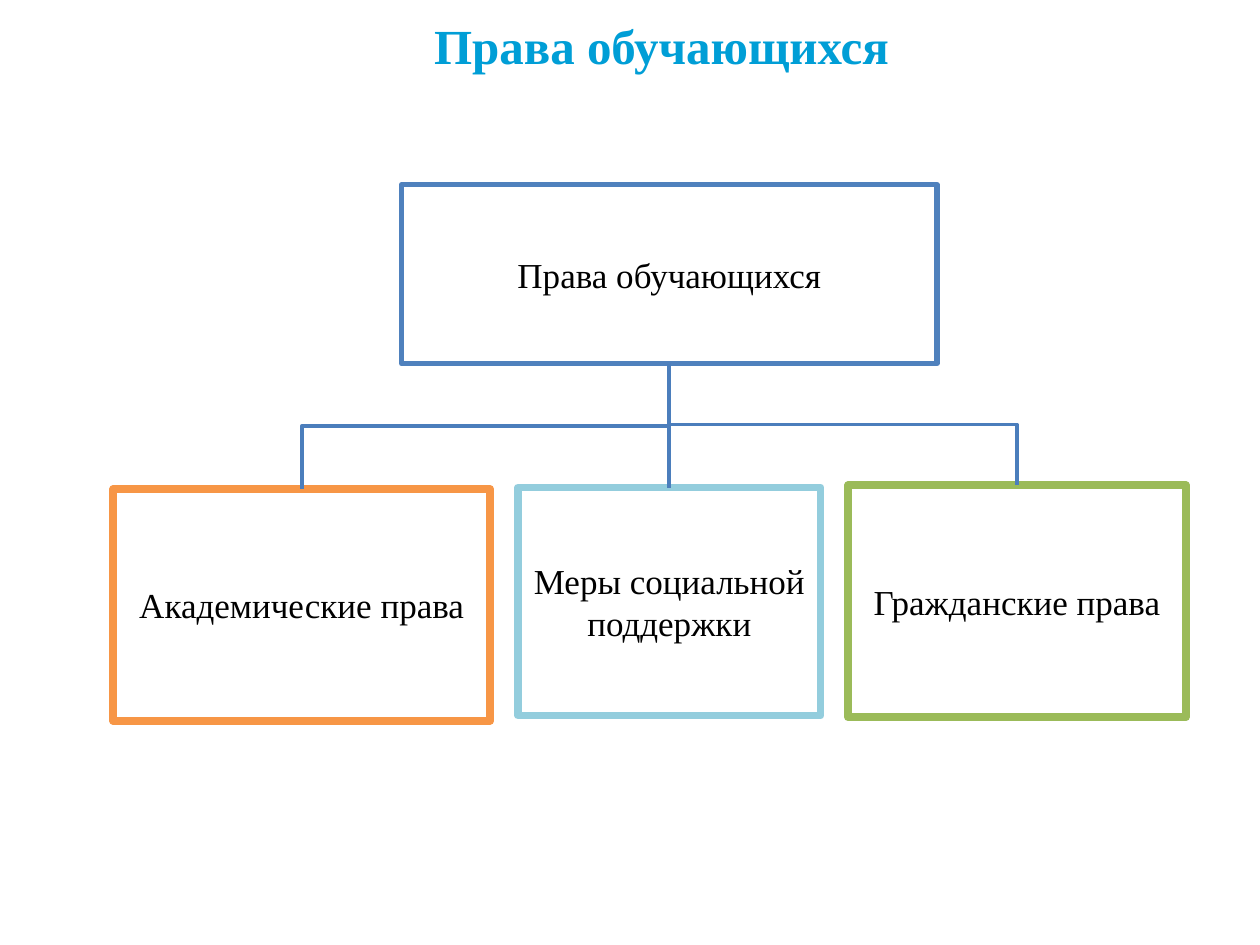
from lxml.etree import SubElement as Sub
from pptx import Presentation
from pptx.dml.color import RGBColor as RGB
from pptx.enum.shapes import MSO_CONNECTOR as Conn, MSO_SHAPE as Shape
from pptx.enum.text import MSO_ANCHOR as Anchor, PP_ALIGN as Align
from pptx.oxml.ns import qn
from pptx.util import Pt

TITLE = RGB(0x00, 0x9E, 0xD6)
BLACK = RGB(0x00, 0x00, 0x00)
BLUE = RGB(0x4F, 0x81, 0xBD)
LINK = RGB(0x4B, 0x7E, 0xBC)
AQUA = RGB(0x93, 0xCD, 0xDD)
ORANGE = RGB(0xF7, 0x96, 0x46)
GREEN = RGB(0x9B, 0xBB, 0x59)


class Chart:
    """Holds the style and the current slide."""
    font = "Times New Roman"
    size = 20
    link = 2.25

    def __init__(self, slide):
        self.slide = slide
        self.shapes = slide.shapes

    def label(self, shape, text, size, color, bold=False):
        frame = shape.text_frame
        frame.word_wrap = True
        frame.vertical_anchor = Anchor.MIDDLE
        para = frame.paragraphs[0]
        para.alignment = Align.CENTER
        run = para.add_run()
        run.text = text
        run.font.name = self.font
        run.font.size = Pt(size)
        run.font.bold = bold
        run.font.color.rgb = color

    def title(self, text, area):
        box = self.shapes.add_textbox(*map(Pt, area))
        self.label(box, text, 28, TITLE, True)

    def box(self, text, area, color, width):
        box = self.shapes.add_shape(Shape.RECTANGLE, *map(Pt, area))
        box.shadow.inherit = False
        box.fill.background()
        box.line.color.rgb = color
        box.line.width = Pt(width)
        self.label(box, text, self.size, BLACK)

    def wire(self, kind, start, end):
        line = self.shapes.add_connector(kind, *map(Pt, start + end))
        line.line.color.rgb = LINK
        line.line.width = Pt(self.link)
        Sub(line._element.spPr, qn("a:effectLst"))
        return line

    def elbow(self, start, end):
        """Link that leaves downwards: a sideways elbow, turned upright."""
        (x1, y1), (x2, y2) = start, end
        side = 1 if x2 > x1 else -1
        mid_x, mid_y = (x1 + x2) / 2, (y1 + y2) / 2
        dx, dy = side * (y2 - y1) / 2, abs(x2 - x1) / 2
        line = self.wire(Conn.ELBOW, (mid_x + dx, mid_y - dy),
                         (mid_x - dx, mid_y + dy))
        turn = 270 if side > 0 else 90
        line._element.spPr.find(qn("a:xfrm")).set("rot", str(turn * 60000))


def main():
    deck = Presentation()
    deck.slide_width, deck.slide_height = Pt(720), Pt(540)
    chart = Chart(deck.slides.add_slide(deck.slide_layouts[6]))

    # Title
    chart.title("Права обучающихся", (54, 3.6, 648, 43.9))

    # Root box
    left, top, width, height = root = (229.5, 105.6, 306, 102.2)
    chart.box("Права обучающихся", root, BLUE, 3)
    start = (left + width / 2, top + height)

    # Branch boxes
    parts = [
        ("Меры социальной поддержки", (296.1, 278.6, 172.8, 130.3), AQUA),
        ("Академические права", (64.8, 279.4, 215.3, 132.5), ORANGE),
        ("Гражданские права", (484.6, 277.4, 193, 132.5), GREEN),
    ]
    for text, area, color in parts:
        chart.box(text, area, color, 4.5)

    # Links from the root to the top of each branch
    middle, *sides = [(x + w / 2, y) for _, (x, y, w, _), _ in parts]
    chart.wire(Conn.STRAIGHT, start, (start[0], middle[1]))
    for end in reversed(sides):
        chart.elbow(start, end)

    deck.save("out.pptx")


if __name__ == "__main__":
    main()
